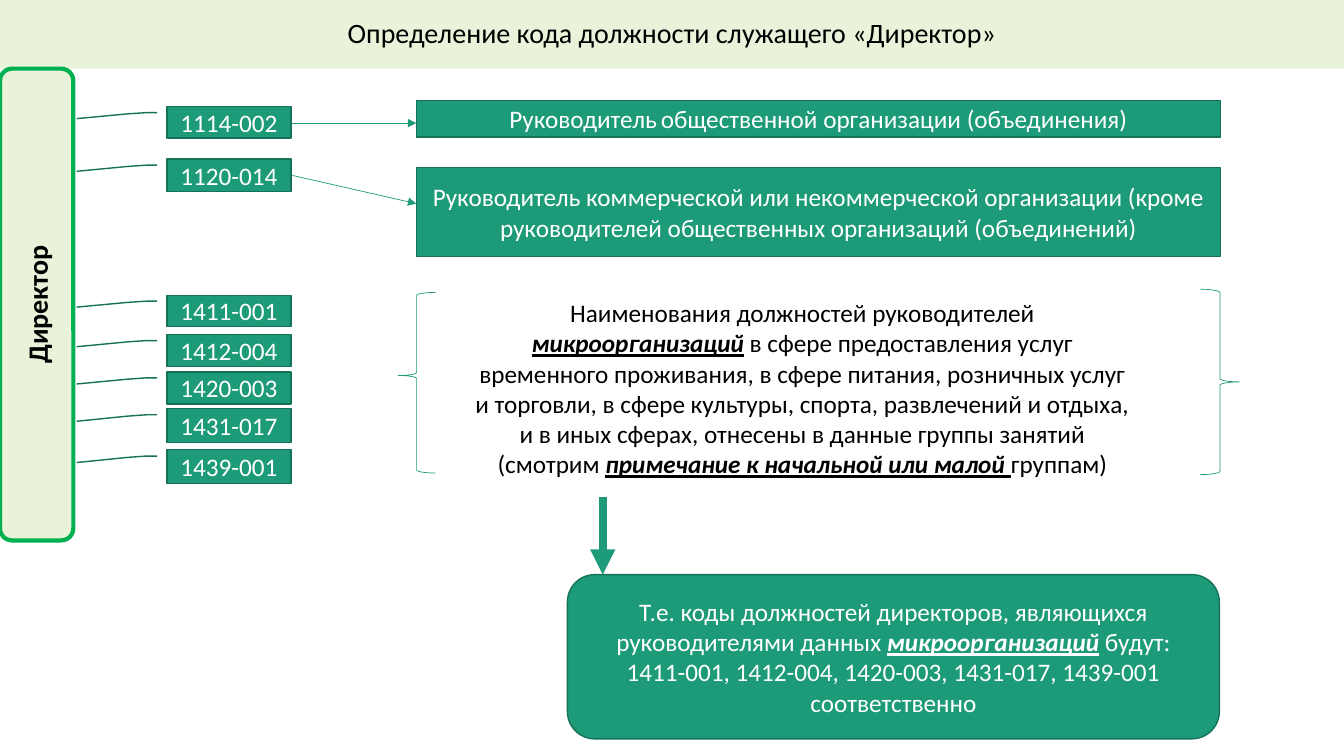
from dataclasses import dataclass
from typing import NamedTuple

from lxml.etree import SubElement
from pptx import Presentation
from pptx.dml.color import RGBColor
from pptx.enum.shapes import MSO_CONNECTOR, MSO_SHAPE
from pptx.enum.text import MSO_ANCHOR, MSO_AUTO_SIZE, PP_ALIGN
from pptx.oxml.ns import qn
from pptx.util import Cm, Pt

COLORS = {
    "pale": "E8F3DA",
    "green": "1D9A78",
    "dark green": "157259",
    "bright green": "00B050",
    "black": "000000",
    "white": "FFFFFF",
}
FONT = "Calibri"
CODE_LEFT, CODE_WIDTH = 4.21, 3.12
POSITION_LEFT, POSITION_WIDTH = 10.49, 20.27
LEADER = (0.19, -0.08, 0.19, -0.17, 0.23, -0.32, 0.38, -0.73)


class Piece(NamedTuple):
    text: str
    emphasis: bool = False
    size: float | None = None


@dataclass
class Box:
    kind: MSO_SHAPE
    left: float
    top: float
    width: float
    height: float
    paragraphs: tuple[tuple[Piece, ...], ...] = ()
    fill: str | None = "green"
    line: str = "dark green"
    line_width: float = 1
    adjustments: tuple[float, ...] = ()


@dataclass
class Arrow:
    start: tuple[float, float]
    end: tuple[float, float]
    width: float = 0.5


def color(name: str) -> RGBColor:
    return RGBColor.from_string(COLORS[name])


def write(text_frame, paragraphs, text_color: str, size: float = 18, bold: bool | None = None) -> None:
    text_frame.word_wrap = True
    for index, pieces in enumerate(paragraphs):
        paragraph = text_frame.add_paragraph() if index else text_frame.paragraphs[0]
        paragraph.alignment = PP_ALIGN.CENTER
        paragraph.font.name = FONT
        paragraph.font.size = Pt(size)
        paragraph.font.bold = bold
        paragraph.font.color.rgb = color(text_color)
        for piece in pieces:
            run = paragraph.add_run()
            run.text = piece.text
            if piece.emphasis:
                run.font.bold = run.font.italic = run.font.underline = True
            if piece.size:
                run.font.size = Pt(piece.size)


def draw_box(slide, box: Box):
    shape = slide.shapes.add_shape(
        box.kind, Cm(box.left), Cm(box.top), Cm(box.width), Cm(box.height))
    shape.shadow.inherit = False
    for index, value in enumerate(box.adjustments):
        shape.adjustments[index] = value
    if box.fill:
        shape.fill.solid()
        shape.fill.fore_color.rgb = color(box.fill)
    else:
        shape.fill.background()
    shape.line.color.rgb = color(box.line)
    shape.line.width = Pt(box.line_width)
    shape.text_frame.vertical_anchor = MSO_ANCHOR.MIDDLE
    write(shape.text_frame, box.paragraphs, "white")
    return shape


def draw_arrow(slide, arrow: Arrow) -> None:
    connector = slide.shapes.add_connector(
        MSO_CONNECTOR.STRAIGHT, *(Cm(value) for value in arrow.start + arrow.end))
    connector.line.color.rgb = color("green")
    connector.line.width = Pt(arrow.width)
    SubElement(connector.line._get_or_add_ln(), qn("a:tailEnd"), type="triangle")
    SubElement(connector._element.spPr, qn("a:effectLst"))


def draw_title(slide) -> None:
    title = slide.shapes.title
    title.left, title.top, title.width, title.height = Cm(0), Cm(0), Cm(33.87), Cm(1.73)
    title.fill.solid()
    title.fill.fore_color.rgb = color("pale")
    title.text_frame.auto_size = MSO_AUTO_SIZE.NONE
    title.text_frame.vertical_anchor = MSO_ANCHOR.MIDDLE
    write(title.text_frame, [[Piece("Определение кода должности служащего «Директор»")]], "black", 20)
    title.text_frame.paragraphs[0].line_spacing = 0.9


# Codes: text, top, height
CODES = [
    ("1114-002", 2.69, 0.79),
    ("1120-014", 4.01, 0.81),
    ("1411-001", 7.44, 0.79),
    ("1412-004", 8.43, 0.81),
    ("1420-003", 9.37, 0.81),
    ("1431-017", 10.29, 0.86),
    ("1439-001", 11.33, 0.86),
]

# Positions, braces and conclusion
BOXES = [
    Box(MSO_SHAPE.RECTANGLE, POSITION_LEFT, 2.54, POSITION_WIDTH, 0.91, ((
        Piece("Руководитель"), Piece(" ", size=12),
        Piece("общественной организации (объединения)")),)),
    Box(MSO_SHAPE.RECTANGLE, POSITION_LEFT, 4.22, POSITION_WIDTH, 2.24, ((
        Piece("Руководитель коммерческой или некоммерческой организации "
              "(кроме руководителей общественных организаций (объединений)"),),)),
    Box(MSO_SHAPE.LEFT_BRACE, 10.03, 7.37, 0.94, 4.55, fill=None,
        line="green", line_width=0.5, adjustments=(0.08, 0.46)),
    Box(MSO_SHAPE.RIGHT_BRACE, 30.25, 7.29, 0.99, 4.67, fill=None,
        line="green", line_width=0.5),
    Box(MSO_SHAPE.ROUNDED_RECTANGLE, 14.3, 14.48, 16.43, 4.14, (
        (Piece("Т.е. коды должностей директоров, являющихся руководителями данных "),
         Piece("микроорганизаций", True), Piece(" будут:")),
        (Piece("1411-001, 1412-004, 1420-003, 1431-017, 1439-001 соответственно"),))),
]

ARROWS = [
    Arrow((15.19, 12.52), (15.19, 14.48), 6),
    Arrow((7.33, 3.1), (POSITION_LEFT, 3.1)),
    Arrow((7.37, 4.42), (POSITION_LEFT, 5.13)),
]

MICRO_NOTE = (
    Piece("Наименования должностей руководителей "),
    Piece("микроорганизаций", True),
    Piece(" в сфере предоставления услуг временного проживания, в сфере питания, "
          "розничных услуг и торговли, в сфере культуры, спорта, развлечений и отдыха, "
          "и в иных сферах, отнесены в данные группы занятий (смотрим "),
    Piece("примечание к начальной или малой ", True),
    Piece("группам)"),
)


def main() -> None:
    presentation = Presentation()
    presentation.slide_width, presentation.slide_height = Cm(33.87), Cm(19.05)
    slide = presentation.slides.add_slide(presentation.slide_layouts[5])
    draw_title(slide)

    # Vertical director label
    director = draw_box(slide, Box(
        MSO_SHAPE.ROUNDED_RECTANGLE, 0, 1.73, 1.85, 11.89,
        fill="pale", line="bright green", line_width=3))
    director.text_frame._txBody.bodyPr.set("vert", "vert270")
    write(director.text_frame, [[Piece("Директор")]], "black", 20, True)

    # Code callouts
    for code, top, height in CODES:
        draw_box(slide, Box(MSO_SHAPE.LINE_CALLOUT_3, CODE_LEFT, top, CODE_WIDTH, height,
                            ((Piece(code),),), adjustments=LEADER))

    for box in BOXES:
        draw_box(slide, box)

    # Note between the braces
    note = slide.shapes.add_textbox(Cm(11.71), Cm(7.37), Cm(17.02), Cm(4.88))
    write(note.text_frame, [MICRO_NOTE], "black")
    note.text_frame.auto_size = MSO_AUTO_SIZE.SHAPE_TO_FIT_TEXT

    for arrow in ARROWS:
        draw_arrow(slide, arrow)

    presentation.save("out.pptx")


if __name__ == "__main__":
    main()
